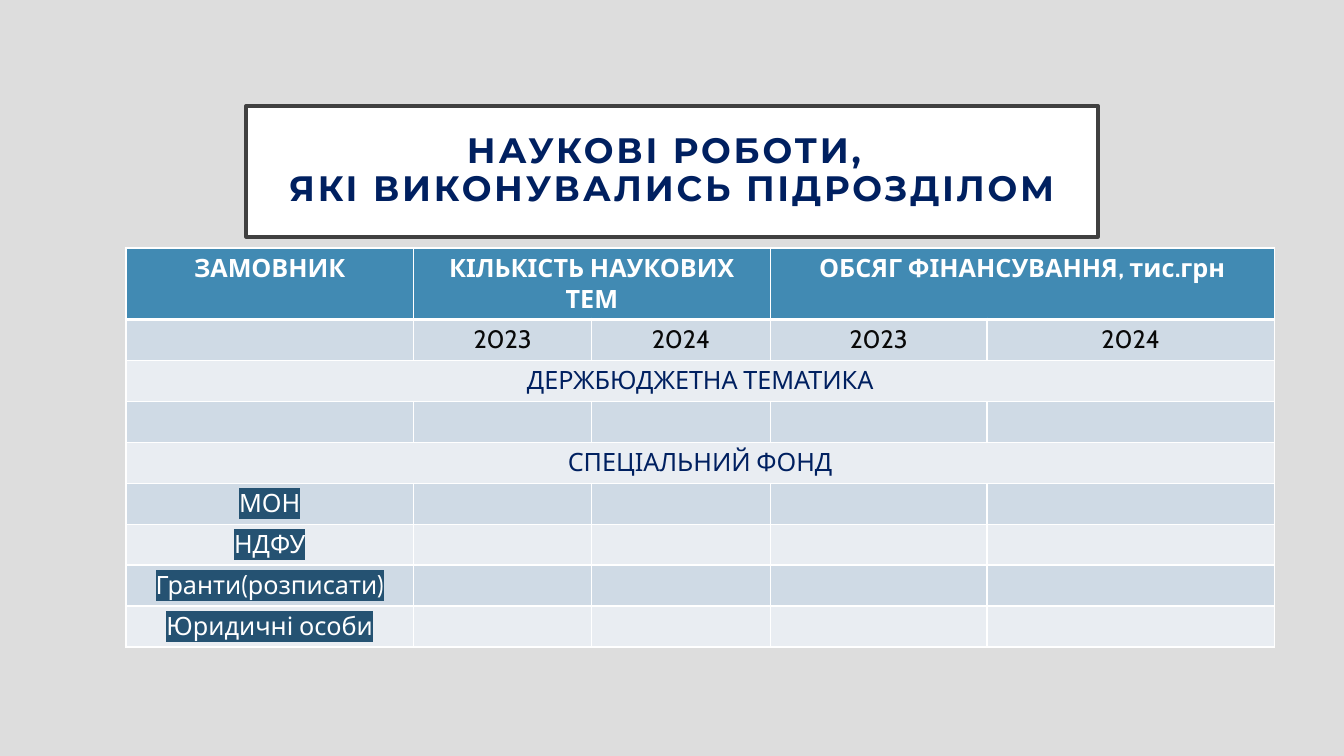
import pptx
import pptx.dml.color
import pptx.enum.shapes
import pptx.enum.text
import pptx.oxml
import pptx.oxml.ns
import pptx.util
from pptx.util import Inches

COLORS = {
    "background": "DDDDDD", "white": "FFFFFF", "frame": "404040", "navy": "002060",
    "header": "418AB3", "dark_band": "CFDAE5", "light_band": "E9EDF2",
    "year": "090909", "highlight": "255272",
}
NAMESPACE = pptx.oxml.ns.nsdecls("a")


def rgb(name):
    return pptx.dml.color.RGBColor.from_string(COLORS[name])


def write_text(frame, text, color="navy", size=18, font="Cabin", bold=False,
               spacing=0, line_spacing=None, highlight=None):
    paragraph = frame.paragraphs[0]
    paragraph.text = text
    paragraph.alignment = pptx.enum.text.PP_ALIGN.CENTER
    paragraph.line_spacing = line_spacing
    for run in paragraph.runs:
        run.font.size = pptx.util.Pt(size)
        run.font.name = font
        run.font.bold = bold
        run.font.color.rgb = rgb(color)
        properties = run.font._element
        if spacing:
            properties.set("spc", str(spacing * 100))
        if highlight:
            properties.find(pptx.oxml.ns.qn("a:solidFill")).addnext(pptx.oxml.parse_xml(
                f'<a:highlight {NAMESPACE}><a:srgbClr val="{COLORS[highlight]}"/></a:highlight>'))


presentation = pptx.Presentation()
presentation.slide_width = Inches(13.33)
presentation.slide_height = Inches(7.5)
slide = presentation.slides.add_slide(presentation.slide_layouts[6])
slide.background.fill.solid()
slide.background.fill.fore_color.rgb = rgb("background")

title = slide.shapes.add_shape(pptx.enum.shapes.MSO_SHAPE.RECTANGLE,
                               Inches(2.44), Inches(1.05), Inches(8.45), Inches(1.3))
title.shadow.inherit = False
title.fill.solid()
title.fill.fore_color.rgb = rgb("white")
title.line.color.rgb = rgb("frame")
title.line.width = pptx.util.Pt(2.5)
title_frame = title.text_frame
title_frame.word_wrap = True
title_frame.vertical_anchor = pptx.enum.text.MSO_ANCHOR.MIDDLE
title_frame.margin_left = title_frame.margin_right = Inches(0.2)
title_frame.margin_top = title_frame.margin_bottom = Inches(0.2)
write_text(title_frame, "НАУКОВІ РОБОТИ, \vЯКІ ВИКОНУВАЛИСЬ ПІДРОЗДІЛОМ", size=25.2,
           font="Montserrat", bold=True, spacing=2, line_spacing=0.9)

column_widths = [2.85, 1.77, 1.77, 2.15, 2.85]
table_rows = [
    ["ЗАМОВНИК", "КІЛЬКІСТЬ НАУКОВИХ ТЕМ", "", "ОБСЯГ ФІНАНСУВАННЯ, тис.грн", ""],
    ["", "2023", "2024", "2023", "2024"],
    ["ДЕРЖБЮДЖЕТНА ТЕМАТИКА", "", "", "", ""],
    ["", "", "", "", ""],
    ["СПЕЦІАЛЬНИЙ ФОНД", "", "", "", ""],
    ["МОН", "", "", "", ""],
    ["НДФУ", "", "", "", ""],
    ["Гранти(розписати)", "", "", "", ""],
    ["Юридичні особи", "", "", "", ""],
]
section_rows = (2, 4)
row_height = 0.406
table = slide.shapes.add_table(len(table_rows), len(column_widths), Inches(1.25), Inches(2.46),
                               Inches(sum(column_widths)),
                               Inches(row_height * len(table_rows))).table
for column, width in zip(table.columns, column_widths):
    column.width = Inches(width)

for row_index, row_texts in enumerate(table_rows):
    table.rows[row_index].height = Inches(row_height)
    if row_index == 0:
        band, text_format = "header", {"color": "white", "bold": True}
    else:
        band = "dark_band" if row_index % 2 else "light_band"
        if row_index == 1:
            text_format = {"color": "year"}
        elif row_index in section_rows:
            text_format = {"color": "navy"}
        else:
            text_format = {"color": "white", "highlight": "highlight"}
    for column_index, text in enumerate(row_texts):
        cell = table.cell(row_index, column_index)
        cell.fill.solid()
        cell.fill.fore_color.rgb = rgb(band)
        if text:
            write_text(cell.text_frame, text, **text_format)
        cell_properties = cell._tc.get_or_add_tcPr()
        for position, side in enumerate(["lnL", "lnR", "lnT", "lnB"]):
            heavy = (row_index, side) in [(0, "lnB"), (1, "lnT")]
            width = pptx.util.Pt(3 if heavy else 1)
            cell_properties.insert(position, pptx.oxml.parse_xml(
                f'<a:{side} {NAMESPACE} w="{width}"><a:solidFill>'
                f'<a:srgbClr val="{COLORS["white"]}"/></a:solidFill></a:{side}>'))

for first_column in (1, 3):
    table.cell(0, first_column).merge(table.cell(0, first_column + 1))
for row_index in section_rows:
    table.cell(row_index, 0).merge(table.cell(row_index, len(column_widths) - 1))

presentation.save("out.pptx")
